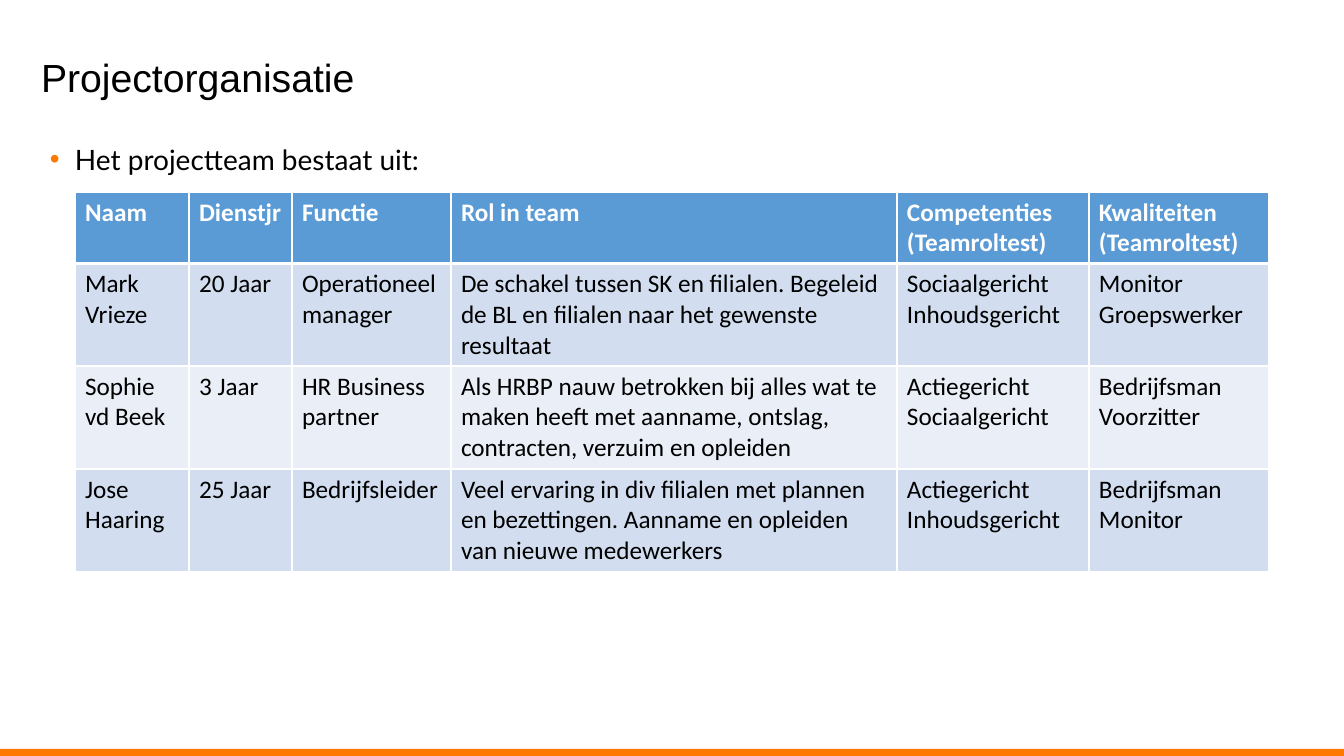
import pptx
import pptx.dml.color
import pptx.enum.shapes
import pptx.enum.text
import pptx.oxml
import pptx.oxml.ns
import pptx.util

SCALE = 914400 / 100.8
INK = {"text": "000000", "white": "FFFFFF", "accent": "FD7900",
       "head": "5B9BD5", "odd": "D2DEEF", "even": "EAEFF7"}
NS = pptx.oxml.ns.nsdecls("a")

COLS = [114, 103, 159, 446, 192, 180]
ROWS = [71, 102, 103, 102]
TEAM = [
    ["Naam", "Dienstjr", "Functie", "Rol in team",
     "Competenties\n(Teamroltest)", "Kwaliteiten\n(Teamroltest)"],
    ["Mark Vrieze", "20 Jaar", "Operationeel manager",
     "De schakel tussen SK en filialen. Begeleid de BL en filialen "
     "naar het gewenste resultaat",
     "Sociaalgericht\nInhoudsgericht", "Monitor\nGroepswerker"],
    ["Sophie vd Beek", "3 Jaar", "HR Business\npartner",
     "Als HRBP nauw betrokken bij alles wat te maken heeft met aanname, "
     "ontslag, contracten, verzuim en opleiden",
     "Actiegericht\nSociaalgericht", "Bedrijfsman\nVoorzitter"],
    ["Jose Haaring", "25 Jaar", "Bedrijfsleider",
     "Veel ervaring in div filialen met plannen en bezettingen. "
     "Aanname en opleiden van nieuwe medewerkers",
     "Actiegericht\nInhoudsgericht", "Bedrijfsman\nMonitor"],
]


def px(num):
    return pptx.util.Emu(round(num * SCALE))


def rgb(key):
    return pptx.dml.color.RGBColor.from_string(INK[key])


def style(obj, form):
    for key, val in form.items():
        setattr(obj, key, val)


class Deck:
    def __init__(self):
        self.prs = pptx.Presentation()
        style(self.prs, {"slide_width": px(1344), "slide_height": px(756)})
        self.slide = self.prs.slides.add_slide(self.prs.slide_layouts[5])
        self.shapes = self.slide.shapes

    def font(self, para, name, size, ink="text", bold=False):
        style(para.font, {"name": name, "size": pptx.util.Pt(size), "bold": bold})
        para.font.color.rgb = rgb(ink)

    def frame(self, box, text, anchor):
        style(box.text_frame, {
            "text": text, "word_wrap": True, "vertical_anchor": anchor,
            "auto_size": pptx.enum.text.MSO_AUTO_SIZE.NONE})
        para = box.text_frame.paragraphs[0]
        style(para, {"line_spacing": 0.9, "space_before": pptx.util.Pt(0),
                     "alignment": pptx.enum.text.PP_ALIGN.LEFT})
        return para

    def title(self, text, left, top, width, height):
        box = self.shapes.title
        style(box, {"left": px(left), "top": px(top),
                    "width": px(width), "height": px(height)})
        para = self.frame(box, text, pptx.enum.text.MSO_ANCHOR.MIDDLE)
        self.font(para, "Arial", 28)

    def bullet(self, text, left, top, width, height):
        box = self.shapes.add_textbox(px(left), px(top), px(width), px(height))
        para = self.frame(box, text, pptx.enum.text.MSO_ANCHOR.TOP)
        props = para._p.get_or_add_pPr()
        style_marks = [
            f'<a:buClr {NS}><a:srgbClr val="{INK["accent"]}"/></a:buClr>',
            f'<a:buFont {NS} typeface="Arial"/>',
            f'<a:buChar {NS} char="•"/>']
        for mark in style_marks:
            props.append(pptx.oxml.parse_xml(mark))
        props.set("marL", str(px(25)))
        props.set("indent", str(px(-25)))
        self.font(para, "Lato", 20)

    def bar(self, left, top, width, height, ink):
        rect = self.shapes.add_shape(pptx.enum.shapes.MSO_SHAPE.RECTANGLE,
                                     px(left), px(top), px(width), px(height))
        rect.shadow.inherit = False
        rect.fill.solid()
        rect.fill.fore_color.rgb = rgb(ink)
        rect.line.fill.background()

    def edges(self, cell, widths):
        props = cell._tc.get_or_add_tcPr()
        for spot, (side, width) in enumerate(widths.items()):
            props.insert(spot, pptx.oxml.parse_xml(
                f'<a:ln{side} {NS} w="{pptx.util.Pt(width)}"><a:solidFill>'
                f'<a:srgbClr val="{INK["white"]}"/></a:solidFill></a:ln{side}>'))

    def table(self, data, left, top, cols, rows):
        grid = self.shapes.add_table(len(rows), len(cols), px(left), px(top),
                                     px(sum(cols)), px(sum(rows))).table
        for col, width in zip(grid.columns, cols):
            col.width = px(width)
        for num, (row, height) in enumerate(zip(grid.rows, rows)):
            row.height = px(height)
            head = num == 0
            fill = "head" if head else "odd" if num % 2 else "even"
            for cell, text in zip(row.cells, data[num]):
                cell.text = text
                cell.fill.solid()
                cell.fill.fore_color.rgb = rgb(fill)
                self.edges(cell, {"L": 1, "R": 1, "T": 3 if num == 1 else 1,
                                  "B": 3 if head else 1})
                for para in cell.text_frame.paragraphs:
                    self.font(para, "Calibri", 18, "white" if head else "text", head)


def main():
    deck = Deck()
    # Footer bar
    deck.bar(0, 749, 1344, 7, "accent")
    # Heading and lead line
    deck.title("Projectorganisatie", 31, 18, 1137, 123)
    deck.bullet("Het projectteam bestaat uit:", 40, 141, 1273, 48)
    # Team table
    deck.table(TEAM, 75, 192, COLS, ROWS)
    deck.prs.save("out.pptx")


if __name__ == "__main__":
    main()
